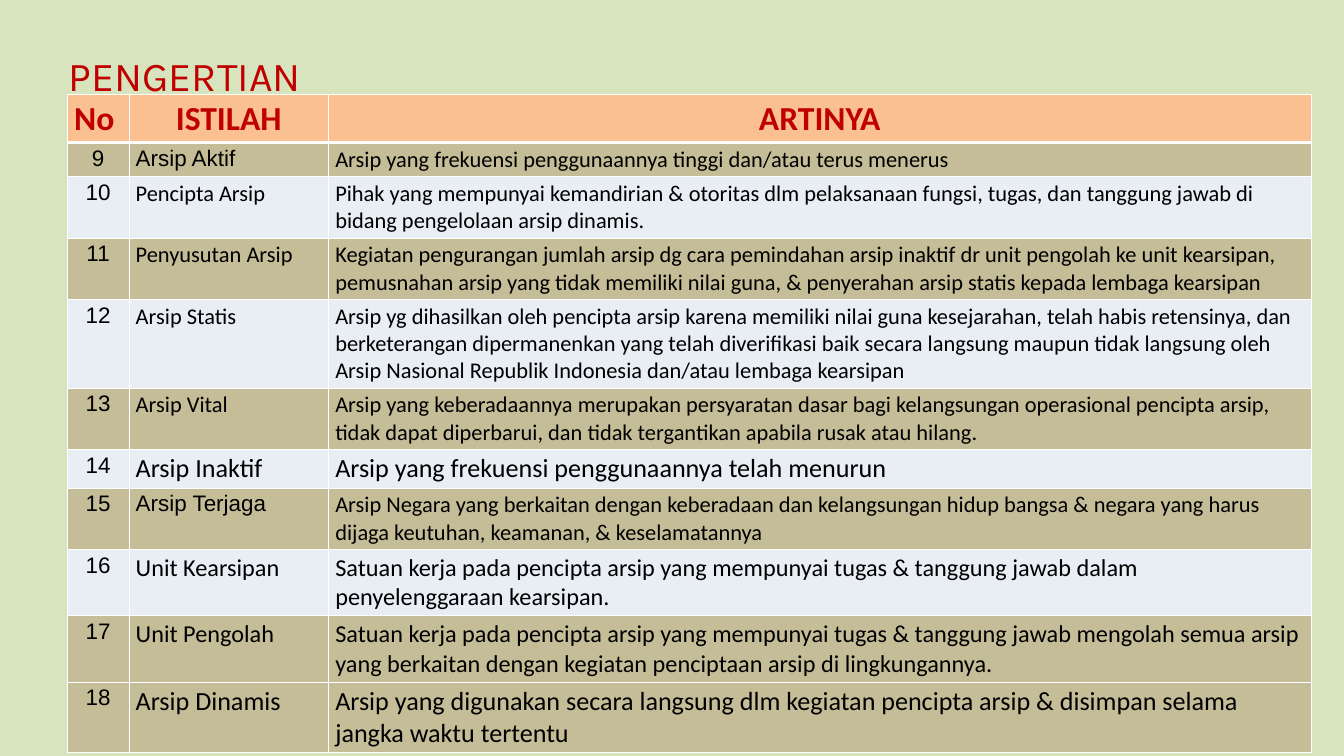
from lxml.etree import SubElement
from pptx import Presentation
from pptx.dml.color import RGBColor
from pptx.enum.text import MSO_ANCHOR, MSO_AUTO_SIZE, PP_ALIGN
from pptx.oxml.ns import qn
from pptx.util import Inches, Pt

BACKGROUND = RGBColor(0xD7, 0xE4, 0xBD)
RED = RGBColor(0xC0, 0x00, 0x00)
BLACK = RGBColor(0x00, 0x00, 0x00)
WHITE = RGBColor(0xFF, 0xFF, 0xFF)
HEADER_FILL = RGBColor(0xFA, 0xC0, 0x90)
TAN_FILL = RGBColor(0xC4, 0xBD, 0x97)
PALE_FILL = RGBColor(0xE9, 0xED, 0xF4)

SLIDE_WIDTH, SLIDE_HEIGHT = 20, 11.25
COLUMN_WIDTHS = (0.92, 2.97, 14.62)
ROW_HEIGHT = 0.49
FIRST_NUMBER = 9
HEADERS = ("No ", "ISTILAH", "ARTINYA")

# Term, meaning, text size, font of the term
TERMS = (
    ("Arsip Aktif",
     "Arsip yang frekuensi penggunaannya tinggi dan/atau terus menerus", 24, "Arial"),
    ("Pencipta Arsip",
     "Pihak yang mempunyai kemandirian & otoritas dlm pelaksanaan fungsi, tugas, dan "
     "tanggung jawab di bidang pengelolaan arsip dinamis.", 24, "Calibri"),
    ("Penyusutan Arsip",
     "Kegiatan pengurangan jumlah arsip dg cara pemindahan arsip inaktif dr unit pengolah "
     "ke unit kearsipan, pemusnahan arsip yang tidak memiliki nilai guna, & penyerahan "
     "arsip statis kepada lembaga kearsipan", 24, "Calibri"),
    ("Arsip Statis",
     "Arsip yg dihasilkan oleh pencipta arsip karena memiliki nilai guna kesejarahan, telah "
     "habis retensinya, dan berketerangan dipermanenkan yang telah diverifikasi baik secara "
     "langsung maupun tidak langsung oleh Arsip Nasional Republik Indonesia dan/atau "
     "lembaga kearsipan", 24, "Calibri"),
    ("Arsip Vital",
     "Arsip yang keberadaannya merupakan persyaratan dasar bagi kelangsungan operasional "
     "pencipta arsip, tidak dapat diperbarui, dan tidak tergantikan apabila rusak atau "
     "hilang.", 24, "Calibri"),
    ("Arsip Inaktif",
     "Arsip yang frekuensi penggunaannya telah menurun", 28, "Calibri"),
    ("Arsip Terjaga",
     "Arsip Negara yang berkaitan dengan keberadaan dan kelangsungan hidup bangsa & negara "
     "yang harus dijaga keutuhan, keamanan, & keselamatannya", 24, "Arial"),
    ("Unit Kearsipan",
     "Satuan kerja pada pencipta arsip yang mempunyai tugas & tanggung jawab dalam "
     "penyelenggaraan kearsipan.", 26, "Calibri"),
    ("Unit Pengolah",
     "Satuan kerja pada pencipta arsip yang mempunyai tugas & tanggung jawab mengolah semua "
     "arsip yang berkaitan dengan kegiatan penciptaan arsip di lingkungannya.", 26, "Calibri"),
    ("Arsip Dinamis",
     "Arsip yang digunakan secara langsung dlm kegiatan pencipta arsip & disimpan selama "
     "jangka waktu tertentu", 28, "Calibri"),
)


def set_attributes(target, values):
    for name, value in values.items():
        setattr(target, name, value)


def write_text(paragraph, text, size, font_name, color, bold=False, alignment=PP_ALIGN.LEFT):
    paragraph.alignment = alignment
    run = paragraph.add_run()
    run.text = text
    set_attributes(run.font, {"size": Pt(size), "name": font_name, "bold": bold})
    run.font.color.rgb = color


def style_cell(cell, fill_color, top=1, bottom=1):
    """Fill the cell and give it white borders; widths are in points."""
    properties = cell._tc.get_or_add_tcPr()
    for side, width in (("L", 1), ("R", 1), ("T", top), ("B", bottom)):
        border = SubElement(properties, qn(f"a:ln{side}"), w=str(Pt(width)))
        fill = SubElement(border, qn("a:solidFill"))
        SubElement(fill, qn("a:srgbClr"), val=str(WHITE))
    cell.fill.solid()
    cell.fill.fore_color.rgb = fill_color


def add_title(slide, text):
    title = slide.shapes.title
    set_attributes(title, {"left": Inches(0.92), "top": Inches(0.09),
                           "width": Inches(7.5), "height": Inches(1.26)})
    set_attributes(title.text_frame, {"word_wrap": True, "auto_size": MSO_AUTO_SIZE.NONE,
                                      "vertical_anchor": MSO_ANCHOR.TOP})
    paragraph = title.text_frame.paragraphs[0]
    paragraph.line_spacing = Pt(97.2)
    write_text(paragraph, text, 44, "Karla", RED)


def add_term_table(slide):
    row_count = len(TERMS) + 1
    table = slide.shapes.add_table(
        row_count, len(COLUMN_WIDTHS), Inches(1), Inches(1.41),
        Inches(sum(COLUMN_WIDTHS)), Inches(ROW_HEIGHT * row_count)).table
    for column, width in zip(table.columns, COLUMN_WIDTHS):
        column.width = Inches(width)
    for row in table.rows:
        row.height = Inches(ROW_HEIGHT)

    for column, header in enumerate(HEADERS):
        cell = table.cell(0, column)
        style_cell(cell, HEADER_FILL, bottom=3)
        write_text(cell.text_frame.paragraphs[0], header, 36, "Calibri", RED,
                   bold=True, alignment=PP_ALIGN.CENTER)

    for row, (term, meaning, size, term_font) in enumerate(TERMS, start=1):
        # Rows alternate, except that the last one is tan as well
        is_pale = row % 2 == 0 and row < len(TERMS)
        contents = (
            (str(FIRST_NUMBER + row - 1), 24, "Arial", PP_ALIGN.CENTER),
            (term, size, term_font, PP_ALIGN.LEFT),
            (meaning, size, "Calibri", PP_ALIGN.LEFT),
        )
        for column, (text, text_size, font_name, alignment) in enumerate(contents):
            cell = table.cell(row, column)
            style_cell(cell, PALE_FILL if is_pale else TAN_FILL, top=3 if row == 1 else 1)
            write_text(cell.text_frame.paragraphs[0], text, text_size, font_name, BLACK,
                       alignment=alignment)


def main():
    presentation = Presentation()
    set_attributes(presentation, {"slide_width": Inches(SLIDE_WIDTH),
                                  "slide_height": Inches(SLIDE_HEIGHT)})
    slide = presentation.slides.add_slide(presentation.slide_layouts[5])
    slide.background.fill.solid()
    slide.background.fill.fore_color.rgb = BACKGROUND
    add_title(slide, "PENGERTIAN")
    add_term_table(slide)
    presentation.save("out.pptx")


if __name__ == "__main__":
    main()
